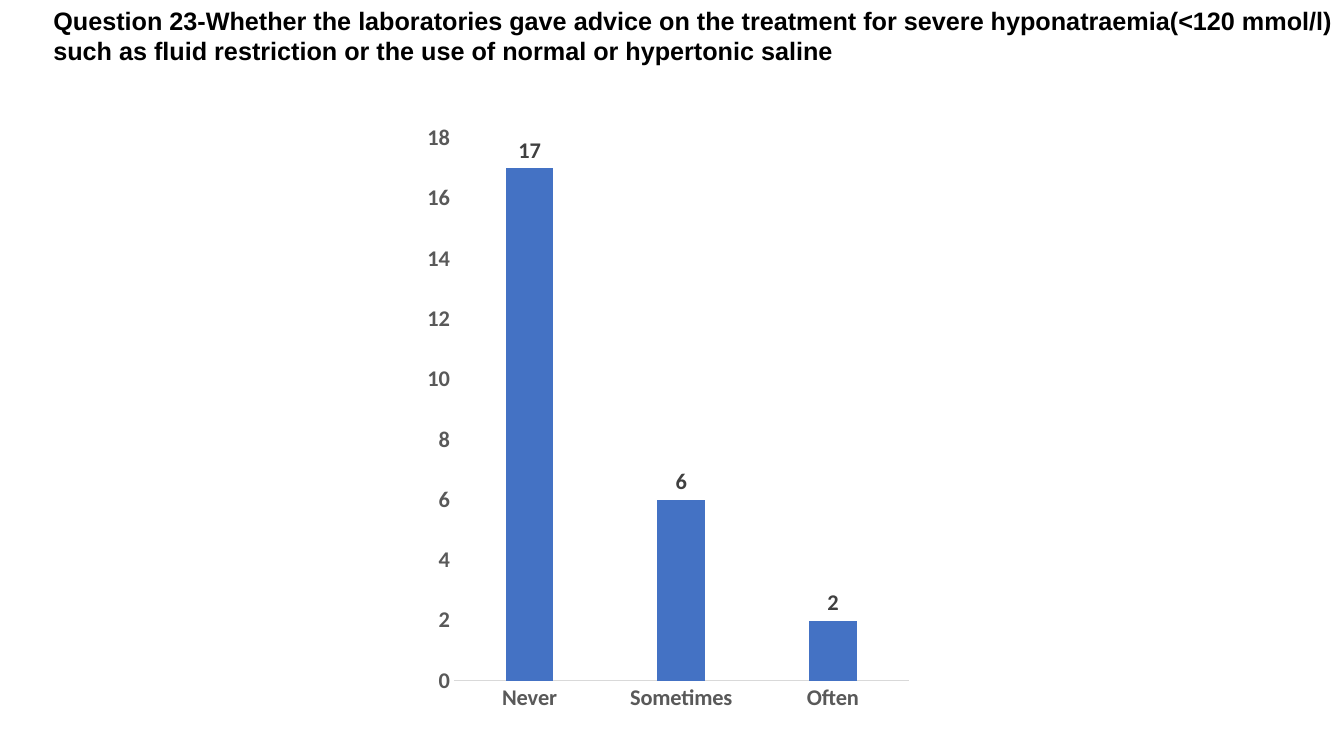
from lxml import etree
from pptx import Presentation
from pptx.chart.data import CategoryChartData
from pptx.dml.color import RGBColor
from pptx.enum.chart import XL_CHART_TYPE, XL_LABEL_POSITION, XL_TICK_MARK
from pptx.enum.text import MSO_AUTO_SIZE
from pptx.oxml.ns import qn
from pptx.util import Pt

COLUMNS = XL_CHART_TYPE.COLUMN_CLUSTERED
OUTSIDE_END = XL_LABEL_POSITION.OUTSIDE_END
NO_TICK = XL_TICK_MARK.NONE
NO_AUTOFIT = MSO_AUTO_SIZE.NONE

TITLE_LINES = [
    "Question 23-Whether the laboratories gave advice on the treatment "
    "for severe hyponatraemia(<120 mmol/l)",
    "such as fluid restriction or the use of normal or hypertonic saline",
]
ANSWERS = {"Never": 17, "Sometimes": 6, "Often": 2}
PLOT_LAYOUT = {
    "layoutTarget": "inner", "xMode": "edge", "yMode": "edge",
    "x": 0.067, "y": 0.083, "w": 0.903, "h": 0.853,
}


def rgb(code):
    return RGBColor.from_string(code)


def set_font(font, name, size, color):
    for key, value in {"name": name, "size": Pt(size), "bold": True}.items():
        setattr(font, key, value)
    font.color.rgb = rgb(color)


deck = Presentation()
deck.slide_width, deck.slide_height = Pt(960), Pt(540)
page = deck.slides.add_slide(deck.slide_layouts[6])

# Answer counts
data = CategoryChartData()
data.categories = list(ANSWERS)
data.add_series("Series 1", list(ANSWERS.values()))
chart = page.shapes.add_chart(
    COLUMNS, Pt(300), Pt(61), Pt(360), Pt(454.5), data
).chart
chart.has_legend = False
chart.has_title = False
set_font(chart.font, "Calibri", 12, "000000")

for axis in (chart.category_axis, chart.value_axis):
    axis.major_tick_mark = NO_TICK
    axis.minor_tick_mark = NO_TICK
    axis.has_major_gridlines = False
    set_font(axis.tick_labels.font, "Calibri", 16, "595959")
chart.category_axis.format.line.color.rgb = rgb("D9D9D9")
chart.category_axis.format.line.width = Pt(0.75)
chart.value_axis.format.line.fill.background()
chart.value_axis.minimum_scale = 0
chart.value_axis.maximum_scale = 18
chart.value_axis.major_unit = 2

plot = chart.plots[0]
plot.gap_width = 219
plot.overlap = -27
plot.vary_by_categories = False
bars = plot.series[0]
bars.format.fill.solid()
bars.format.fill.fore_color.rgb = rgb("4472C4")
labels = bars.data_labels
labels.show_value = True
labels.position = OUTSIDE_END
set_font(labels.font, "Calibri", 16, "404040")

# Fixed position of the plot area inside the chart
plot_area = chart.element.find(".//" + qn("c:plotArea"))
layout = plot_area.find(qn("c:layout"))
if layout is None:
    layout = etree.Element(qn("c:layout"))
    plot_area.insert(0, layout)
manual = etree.SubElement(layout, qn("c:manualLayout"))
for key, value in PLOT_LAYOUT.items():
    etree.SubElement(manual, qn("c:" + key)).set("val", str(value))

# Question
box = page.shapes.add_textbox(Pt(31), Pt(0), Pt(937), Pt(72.7))
frame = box.text_frame
frame.word_wrap = True
frame.auto_size = NO_AUTOFIT
for index, line in enumerate(TITLE_LINES):
    para = frame.add_paragraph() if index else frame.paragraphs[0]
    span = para.add_run()
    span.text = line
    set_font(span.font, "Arial", 18, "000000")

deck.save("out.pptx")
